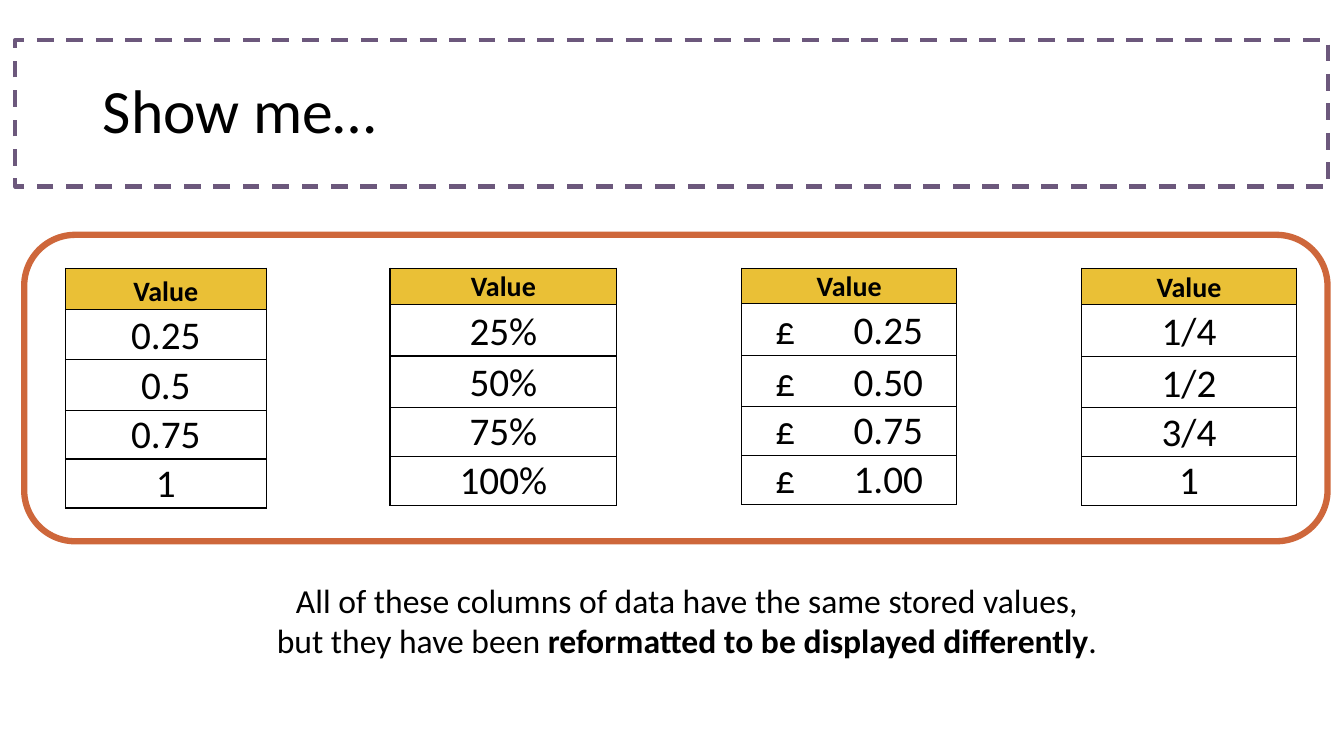
from lxml import etree
from pptx import Presentation
from pptx.dml.color import RGBColor
from pptx.enum.dml import MSO_LINE
from pptx.enum.shapes import MSO_SHAPE as SHAPE
from pptx.enum.text import MSO_ANCHOR as ANCHOR, PP_ALIGN as ALIGN
from pptx.oxml.ns import qn
from pptx.util import Pt

FONT = "Calibri"
BLACK, WHITE, GOLD = "000000", "FFFFFF", "EAC036"
PURPLE, ORANGE = "6C587C", "CE673B"


def rgb(color):
    return RGBColor.from_string(color)


def set_font(font, size, bold=False):
    font.name, font.size, font.bold = FONT, Pt(size), bold
    font.color.rgb = rgb(BLACK)


def add_outline(slide, preset, box, color, width):
    sp = slide.shapes.add_shape(preset, *map(Pt, box))
    sp.shadow.inherit = False
    sp.fill.background()
    sp.line.color.rgb = rgb(color)
    sp.line.width = Pt(width)
    return sp


def add_borders(cell):
    tcPr = cell._tc.get_or_add_tcPr()
    for i, side in enumerate(("lnL", "lnR", "lnT", "lnB")):
        ln = etree.Element(qn(f"a:{side}"), w=str(Pt(1)))
        fill = etree.SubElement(ln, qn("a:solidFill"))
        etree.SubElement(fill, qn("a:srgbClr"), val=BLACK)
        tcPr.insert(i, ln)


def add_right_tab(p, pos):
    tabs = etree.SubElement(p._p.get_or_add_pPr(), qn("a:tabLst"))
    etree.SubElement(tabs, qn("a:tab"), pos=str(Pt(pos)), algn="r")


# Title in a dashed frame
def add_title(slide, box, text):
    x, y, w, h = box
    frame = add_outline(slide, SHAPE.RECTANGLE, box, PURPLE, 3)
    frame.line.dash_style = MSO_LINE.DASH
    title = slide.shapes.title
    title.left, title.top, title.width, title.height = map(Pt, (x + 55.5, y, w - 110, h))
    tf = title.text_frame
    tf.text = text
    tf.vertical_anchor = ANCHOR.MIDDLE
    p = tf.paragraphs[0]
    p.alignment, p.line_spacing = ALIGN.LEFT, 0.9
    set_font(p.font, 44)


# One-column table; a tab in a value puts the currency sign left, the amount right
def add_value_table(slide, box, values, heights):
    x, y, w = box
    table = slide.shapes.add_table(len(heights), 1, Pt(x), Pt(y), Pt(w), Pt(sum(heights))).table
    table.first_row = table.horz_banding = False
    for i, (text, height) in enumerate(zip(["Value", *values], heights)):
        header = i == 0
        table.rows[i].height = Pt(height)
        cell = table.cell(i, 0)
        cell.text = text
        cell.vertical_anchor = ANCHOR.BOTTOM
        cell.margin_left = cell.margin_right = cell.margin_top = Pt(0.7)
        cell.margin_bottom = 0
        cell.fill.solid()
        cell.fill.fore_color.rgb = rgb(GOLD if header else WHITE)
        add_borders(cell)
        p = cell.text_frame.paragraphs[0]
        p.alignment = ALIGN.CENTER
        if "\t" in text:
            p.alignment = ALIGN.LEFT
            cell.margin_left = Pt(24)
            add_right_tab(p, w - 48)
        set_font(p.font, 20 if header else 28, header)


# Rounded panel holding the four tables
def add_panel(slide, box, columns):
    x, y, w, h = box
    add_outline(slide, SHAPE.ROUNDED_RECTANGLE, box, ORANGE, 4.5)
    for left, width, heights, values in columns:
        add_value_table(slide, (x + left, y + 23.75, width), values, heights)


# Centred conclusion below the panel
def add_conclusion(slide, box, lines):
    tf = slide.shapes.add_textbox(*map(Pt, box)).text_frame
    tf.word_wrap = True
    for i, line in enumerate(lines):
        p = tf.add_paragraph() if i else tf.paragraphs[0]
        p.alignment = ALIGN.CENTER
        set_font(p.font, 24)
        for text, bold in line:
            r = p.add_run()
            r.text = text
            r.font.bold = bold


def main():
    prs = Presentation()
    prs.slide_width, prs.slide_height = Pt(960), Pt(540)
    slide = prs.slides.add_slide(prs.slide_layouts[5])
    add_title(slide, (10.8, 28.8, 938, 104.4), "Show me…")
    # Left offset, width, row heights, values
    columns = [
        (29.5, 143.3, (29.5, 36, 36, 34.5, 34.5), ("0.25", "0.5", "0.75", "1")),
        (261.3, 162, (26, 36.75, 36.75, 35, 35), ("25%", "50%", "75%", "100%")),
        (512.6, 153.4, (25.5, 36.75, 36.75, 34.5, 34.5),
         ("£\t0.25", "£\t0.50", "£\t0.75", "£\t1.00")),
        (755.3, 153.4, (26.25, 36.75, 36.75, 34.5, 34.5), ("1/4", "1/2", "3/4", "1")),
    ]
    add_panel(slide, (17.3, 167.75, 931, 218.9), columns)
    add_conclusion(slide, (75.6, 410.4, 830, 65.5), [
        [("All of these columns of data have the same stored values,", False)],
        [("but they have been ", False),
         ("reformatted to be displayed differently", True), (".", False)],
    ])
    prs.save("out.pptx")


if __name__ == "__main__":
    main()
